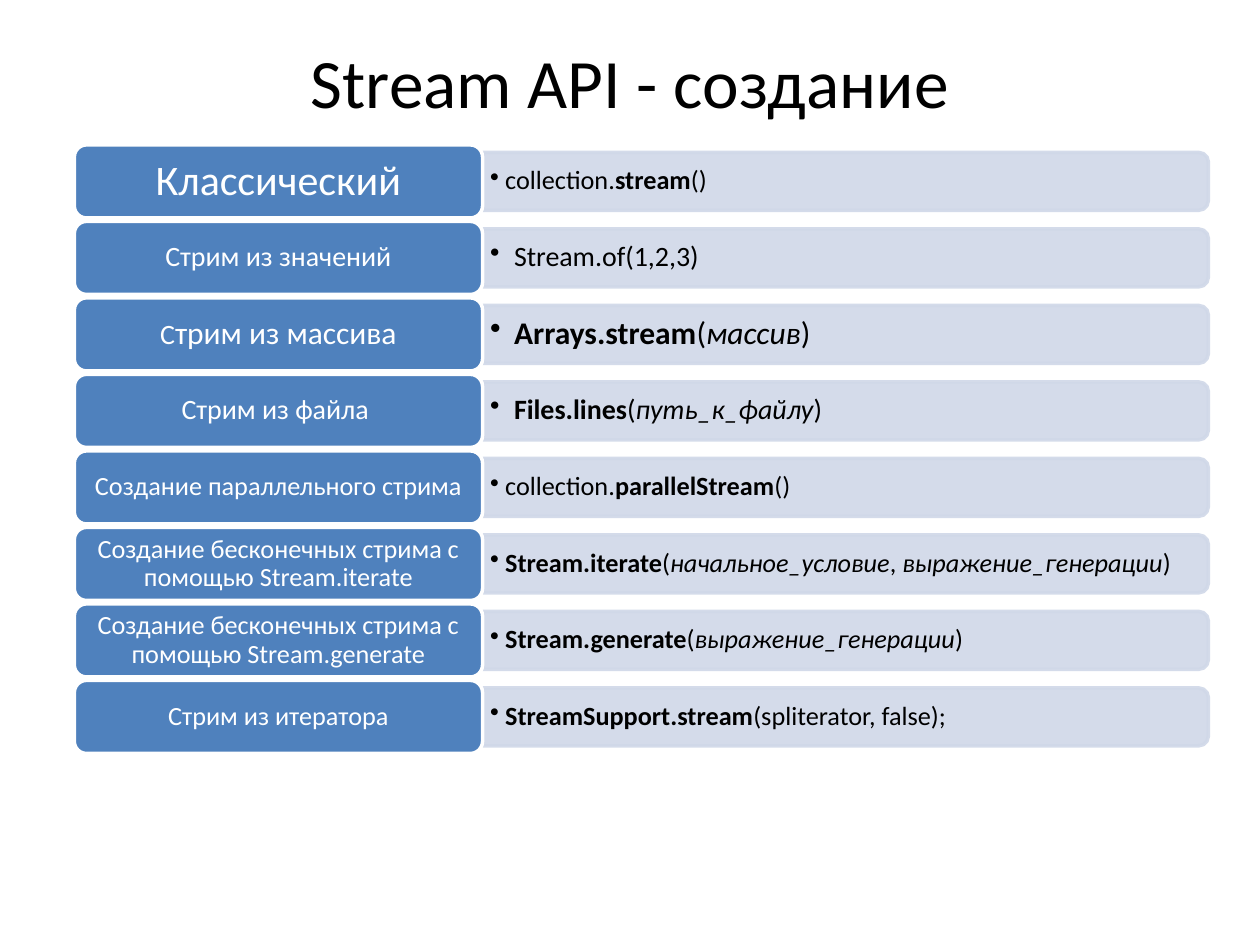
from lxml import etree
from pptx import Presentation
from pptx.dml.color import RGBColor
from pptx.enum.shapes import MSO_SHAPE as Shape
from pptx.enum.text import MSO_ANCHOR as Anchor, PP_ALIGN as Align
from pptx.oxml.ns import qn
from pptx.util import Inches, Pt

BLUE = RGBColor(0x4F, 0x81, 0xBD)
PALE_BLUE = RGBColor(0xD0, 0xD8, 0xE8)
WHITE = RGBColor(0xFF, 0xFF, 0xFF)
BLACK = RGBColor(0, 0, 0)
FONT = "Calibri"

LABEL_WIDTH, LABEL_HEIGHT = Inches(3.24), Inches(0.58)
BAND_HEIGHT = Inches(0.46)
PLAIN, BOLD, ITALIC = "plain", "bold", "italic"

# Each row: label runs (text, size), detail size, bullet indent, detail runs (text, style)
ROWS = [
    ([("Классический", 24)], 15, 0.12,
     [("collection.", PLAIN), ("stream", BOLD), ("()", PLAIN)]),
    ([("Стрим из значений", 16)], 16, 0.19,
     [("Stream.of(1,2,3)", PLAIN)]),
    ([("C", 16), ("трим из массива", 18)], 18, 0.19,
     [("Arrays.stream", BOLD), ("(", PLAIN), ("массив", ITALIC), (")", PLAIN)]),
    ([("Стрим из файла ", 16)], 16, 0.19,
     [("Files.lines", BOLD), ("(", PLAIN), ("путь_к_файлу", ITALIC), (")", PLAIN)]),
    ([("Создание параллельного стрима", 15)], 15, 0.12,
     [("collection.", PLAIN), ("parallelStream", BOLD), ("()", PLAIN)]),
    ([("Создание бесконечных стрима с помощью Stream.iterate", 15)], 15, 0.12,
     [("Stream.iterate", BOLD), ("(", PLAIN), ("начальное_условие", ITALIC), (", ", PLAIN),
      ("выражение_генерации", ITALIC), (")", PLAIN)]),
    ([("Создание бесконечных стрима с помощью Stream.generate", 15)], 15, 0.12,
     [("Stream.generate", BOLD), ("(", PLAIN), ("выражение_генерации", ITALIC), (")", PLAIN)]),
    ([("Стрим из итератора", 15)], 15, 0.12,
     [("StreamSupport.stream", BOLD), ("(spliterator, false);", PLAIN)]),
]


def add_run(paragraph, text, size, color, style=PLAIN):
    run = paragraph.add_run()
    run.text = text
    font = run.font
    font.name, font.size = FONT, Pt(size)
    font.color.rgb = color
    font.bold, font.italic = style == BOLD, style == ITALIC


def set_frame(text_frame, side, edge):
    text_frame.word_wrap = True
    text_frame.vertical_anchor = Anchor.MIDDLE
    text_frame.margin_left = text_frame.margin_right = side
    text_frame.margin_top = text_frame.margin_bottom = edge
    text_frame.paragraphs[0].line_spacing = 0.9


def set_bullet(paragraph, indent):
    properties = paragraph._p.get_or_add_pPr()
    properties.set("marL", str(Inches(indent)))
    properties.set("indent", str(-Inches(indent)))
    etree.SubElement(properties, qn("a:buChar"), char="•")


def style_shape(shape, fill, line):
    shape.shadow.inherit = False
    shape.fill.solid()
    shape.fill.fore_color.rgb = fill
    shape.line.color.rgb = line
    shape.line.width = Pt(2)


def set_alpha(shape, percent):
    for color in shape._element.spPr.iter(qn("a:srgbClr")):
        etree.SubElement(color, qn("a:alpha"), val=str(percent * 1000))


def add_band(slide, left, top, width, size, indent, runs):
    # Quarter turn about the centre puts the rounded corners on the right
    band = slide.shapes.add_shape(
        Shape.ROUND_2_SAME_RECTANGLE, left + (width - BAND_HEIGHT) // 2,
        top + (BAND_HEIGHT - width) // 2, BAND_HEIGHT, width)
    band.rotation = 90
    style_shape(band, PALE_BLUE, PALE_BLUE)
    set_alpha(band, 90)

    # Upright text over the band
    text_box = slide.shapes.add_textbox(left, top, width, BAND_HEIGHT)
    set_frame(text_box.text_frame, Inches(0.06), Inches(0.03))
    paragraph = text_box.text_frame.paragraphs[0]
    set_bullet(paragraph, indent)
    for text, style in runs:
        add_run(paragraph, text, size, BLACK, style)


def add_label(slide, left, top, runs):
    label = slide.shapes.add_shape(
        Shape.ROUNDED_RECTANGLE, left, top, LABEL_WIDTH, LABEL_HEIGHT)
    style_shape(label, BLUE, WHITE)
    set_frame(label.text_frame, Inches(0.06), Inches(0.03))
    paragraph = label.text_frame.paragraphs[0]
    paragraph.alignment = Align.CENTER
    for text, size in runs:
        add_run(paragraph, text, size, WHITE)


def add_rows(slide, left, top, width, height):
    pitch = (height - LABEL_HEIGHT) // (len(ROWS) - 1)
    for index, (label_runs, size, indent, detail_runs) in enumerate(ROWS):
        row_top = top + index * pitch
        add_band(slide, left + LABEL_WIDTH, row_top + (LABEL_HEIGHT - BAND_HEIGHT) // 2,
                 width - LABEL_WIDTH, size, indent, detail_runs)
        add_label(slide, left, row_top, label_runs)


def add_title(slide, left, top, width, height):
    title = slide.shapes.title
    title.left, title.top, title.width, title.height = left, top, width, height
    title.text_frame.vertical_anchor = Anchor.MIDDLE
    paragraph = title.text_frame.paragraphs[0]
    paragraph.alignment = Align.CENTER
    add_run(paragraph, "Stream API - создание", 39.6, BLACK)


def main():
    presentation = Presentation()
    presentation.slide_width, presentation.slide_height = Inches(10), Inches(7.5)
    slide = presentation.slides.add_slide(presentation.slide_layouts[5])
    add_title(slide, Inches(0.5), Inches(0.3), Inches(9), Inches(0.69))
    add_rows(slide, Inches(0.59), Inches(1.15), Inches(9), Inches(4.83))
    presentation.save("out.pptx")


if __name__ == "__main__":
    main()
